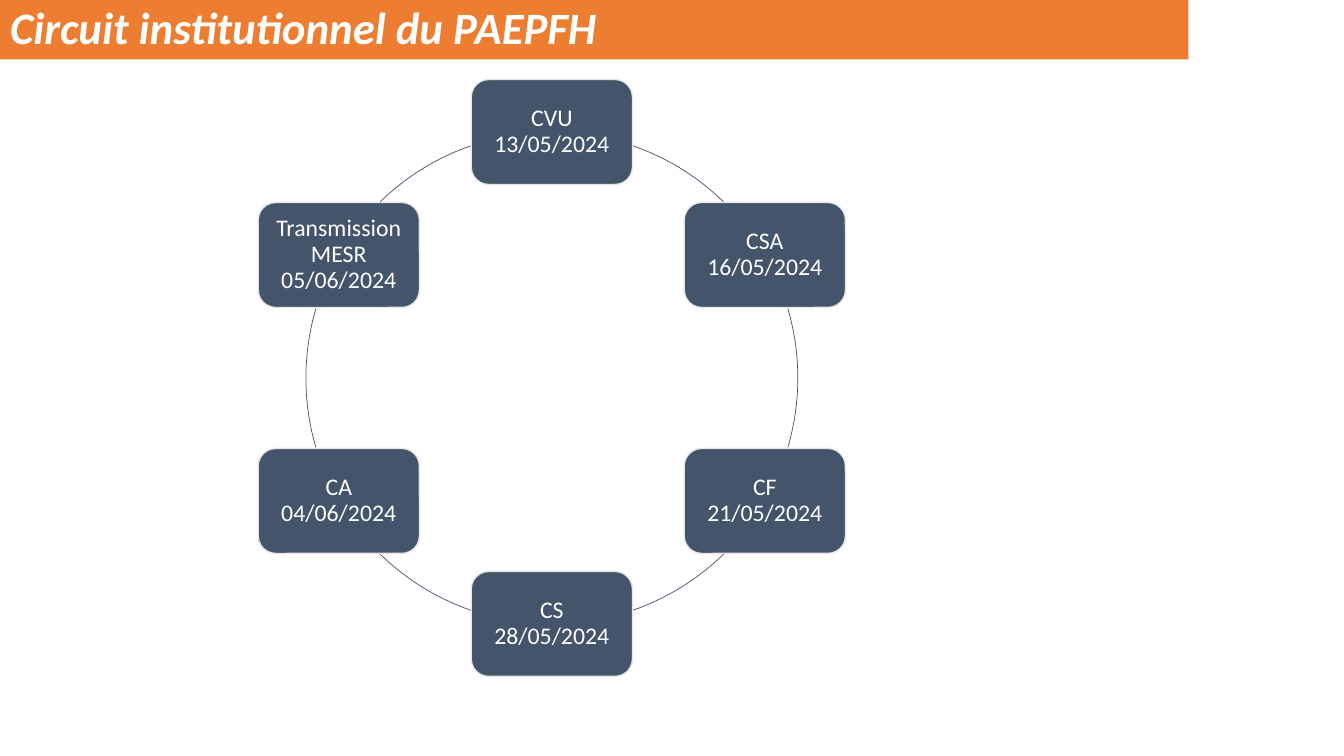
import math

from pptx import Presentation
from pptx.dml.color import RGBColor
from pptx.enum.shapes import MSO_SHAPE
from pptx.enum.text import MSO_ANCHOR, MSO_AUTO_SIZE, PP_ALIGN
from pptx.util import Pt

ARC = MSO_SHAPE.ARC
ROUNDED = MSO_SHAPE.ROUNDED_RECTANGLE
LEFT, CENTER = PP_ALIGN.LEFT, PP_ALIGN.CENTER
BOTTOM, MIDDLE = MSO_ANCHOR.BOTTOM, MSO_ANCHOR.MIDDLE
NO_AUTOFIT = MSO_AUTO_SIZE.NONE
TITLE_ONLY = 5

COLORS = {"orange": "ED7D31", "slate": "44546A", "edge": "E7E6E6", "white": "FFFFFF"}
TITLE_FONT = {"name": "Calibri", "size": Pt(32), "bold": True, "italic": True}
NODE_FONT = {"name": "Calibri", "size": Pt(17)}

CENTER_X, CENTER_Y, RADIUS = 394.2, 270, 175.7
NODE_WIDTH, NODE_HEIGHT = 115.2, 75
STEPS = [
    "CVU 13/05/2024",
    "CSA 16/05/2024",
    "CF 21/05/2024",
    "CS 28/05/2024",
    "CA 04/06/2024",
    "Transmission MESR 05/06/2024",
]
# Visible part of the ring after each step, in degrees clockwise from the right
ARCS = [(289.3, 314.3), (343.6, 16.4), (45.7, 70.7),
        (109.3, 134.3), (163.6, 196.4), (225.7, 250.7)]
ADJUSTMENT_PER_DEGREE = 0.6


def color(name):
    return RGBColor.from_string(COLORS[name])


def fill_shape(shape, name):
    shape.fill.solid()
    shape.fill.fore_color.rgb = color(name)


def outline(shape, name, width):
    shape.line.color.rgb = color(name)
    shape.line.width = Pt(width)


def write_text(shape, text, font, alignment, anchor):
    frame = shape.text_frame
    frame.text = text
    frame.word_wrap = True
    frame.auto_size = NO_AUTOFIT
    frame.vertical_anchor = anchor
    para = frame.paragraphs[0]
    para.alignment = alignment
    para.line_spacing = 0.9
    para.space_before = Pt(0)
    span = para.runs[0]
    for name, value in font.items():
        setattr(span.font, name, value)
    span.font.color.rgb = color("white")
    return frame


def add_title(page, text):
    title = page.shapes.title
    title.left, title.top, title.width, title.height = Pt(0), Pt(0), Pt(848.9), Pt(42.5)
    fill_shape(title, "orange")
    write_text(title, text, TITLE_FONT, LEFT, BOTTOM)


def add_step(page, text, angle):
    """Place a step box on the ring at an angle in degrees."""
    x = CENTER_X + RADIUS * math.cos(math.radians(angle))
    y = CENTER_Y + RADIUS * math.sin(math.radians(angle))
    node = page.shapes.add_shape(ROUNDED, Pt(x - NODE_WIDTH / 2), Pt(y - NODE_HEIGHT / 2),
                                 Pt(NODE_WIDTH), Pt(NODE_HEIGHT))
    node.shadow.inherit = False
    fill_shape(node, "slate")
    outline(node, "edge", 1)
    frame = write_text(node, text, NODE_FONT, CENTER, MIDDLE)
    for side in ("left", "top", "right", "bottom"):
        setattr(frame, f"margin_{side}", Pt(5))


def add_arc(page, start, end):
    arc = page.shapes.add_shape(ARC, Pt(CENTER_X - RADIUS), Pt(CENTER_Y - RADIUS),
                                Pt(2 * RADIUS), Pt(2 * RADIUS))
    arc.shadow.inherit = False
    arc.fill.background()
    outline(arc, "slate", 0.5)
    for index, angle in enumerate((start, end)):
        arc.adjustments[index] = angle * ADJUSTMENT_PER_DEGREE


def main():
    deck = Presentation()
    deck.slide_width, deck.slide_height = Pt(960), Pt(540)
    page = deck.slides.add_slide(deck.slide_layouts[TITLE_ONLY])
    add_title(page, "Circuit institutionnel du PAEPFH")
    for index, (text, (start, end)) in enumerate(zip(STEPS, ARCS)):
        add_step(page, text, -90 + index * 360 / len(STEPS))
        add_arc(page, start, end)
    deck.save("out.pptx")


if __name__ == "__main__":
    main()
